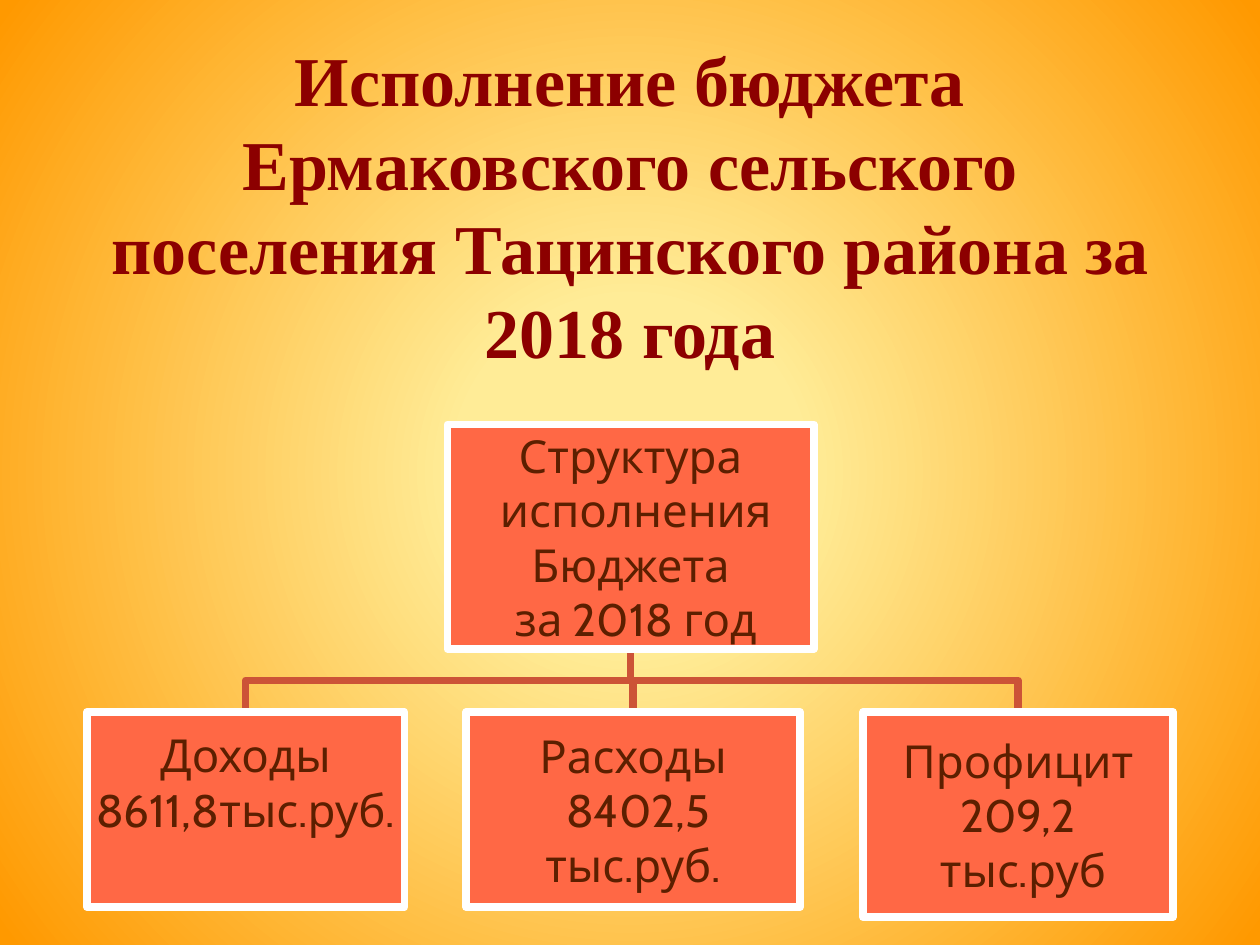
from lxml.etree import SubElement
from pptx import Presentation
from pptx.dml.color import RGBColor
from pptx.enum.shapes import MSO_SHAPE
from pptx.enum.text import MSO_ANCHOR, PP_ALIGN
from pptx.oxml.ns import qn
from pptx.util import Pt

CENTER = RGBColor(0xFF, 0xEC, 0x97)
EDGE = RGBColor(0xFF, 0x99, 0x00)
TITLE = RGBColor(0x8C, 0x00, 0x00)
BOX = RGBColor(0xFF, 0x68, 0x45)
BORDER = RGBColor(0xFF, 0xFF, 0xFF)
TEXT = RGBColor(0x5C, 0x1F, 0x00)
LINK = RGBColor(0xCC, 0x53, 0x37)

LINE_WIDTH = 4.33
INSET = 1.44
ROOT = (255.6, 242.6, 209.5, 128.2, "Структура\n исполнения\nБюджета\n за 2018 год", INSET)
CHILD_TOP = 406.8
CHILDREN = [
    (49.7, CHILD_TOP, 181.4, 111.6, "Доходы\n8611,8тыс.руб.", 33),
    (266.4, CHILD_TOP, 190.8, 111.6, "Расходы\n 8402,5\vтыс.руб.", INSET),
    (493.2, CHILD_TOP, 177.1, 117.4, "Профицит\n209,2\n тыс.руб", INSET),
]


def set_background(s):
    fill = s.background.fill
    fill.gradient()
    for stop, position, color in zip(fill.gradient_stops, (0.22, 0.99), (CENTER, EDGE)):
        stop.position = position
        stop.color.rgb = color
    grad = s.background._cSld.find(".//" + qn("a:gradFill"))
    grad.remove(grad.find(qn("a:lin")))
    radial = SubElement(grad, qn("a:path"), path="circle")
    SubElement(radial, qn("a:fillToRect"), l="50000", t="50000", r="50000", b="50000")


def format_text(tf, size, font, color, bold=False):
    tf.word_wrap = True
    tf.vertical_anchor = MSO_ANCHOR.MIDDLE
    for p in tf.paragraphs:
        p.alignment = PP_ALIGN.CENTER
        for r in p.runs:
            r.font.size = Pt(size)
            r.font.name = font
            r.font.bold = bold
            r.font.color.rgb = color


def add_title(s, text):
    tf = s.shapes.add_textbox(Pt(36), Pt(21), Pt(648), Pt(192)).text_frame
    tf.text = text
    format_text(tf, 40, "Times New Roman", TITLE, bold=True)
    tf.paragraphs[0].line_spacing = Pt(48)


def add_box(s, left, top, width, height, text, bottom_inset):
    sp = s.shapes.add_shape(MSO_SHAPE.RECTANGLE, Pt(left), Pt(top), Pt(width), Pt(height))
    sp.shadow.inherit = False
    sp.fill.solid()
    sp.fill.fore_color.rgb = BOX
    sp.line.color.rgb = BORDER
    sp.line.width = Pt(LINE_WIDTH)
    tf = sp.text_frame
    tf.margin_left = tf.margin_right = tf.margin_top = Pt(INSET)
    tf.margin_bottom = Pt(bottom_inset)
    tf.text = text
    format_text(tf, 26, "Cabin", TEXT)


def add_link(s, parent, child):
    x1, y1 = parent[0] + parent[2] / 2, parent[1] + parent[3]
    x2, y2 = child[0] + child[2] / 2, child[1]
    middle = (y1 + y2) / 2
    builder = s.shapes.build_freeform(Pt(x1), Pt(y1))
    builder.add_line_segments(
        [(Pt(x1), Pt(middle)), (Pt(x2), Pt(middle)), (Pt(x2), Pt(y2))], close=False)
    sp = builder.convert_to_shape()
    sp.shadow.inherit = False
    sp.fill.background()
    sp.line.color.rgb = LINK
    sp.line.width = Pt(LINE_WIDTH)


def main():
    prs = Presentation()
    prs.slide_width, prs.slide_height = Pt(720), Pt(540)
    s = prs.slides.add_slide(prs.slide_layouts[6])
    set_background(s)
    add_title(s, "Исполнение бюджета Ермаковского сельского поселения "
                 "Тацинского района за 2018 года")
    for child in CHILDREN:
        add_link(s, ROOT, child)
    for box in [ROOT, *CHILDREN]:
        add_box(s, *box)
    prs.save("out.pptx")


if __name__ == "__main__":
    main()
